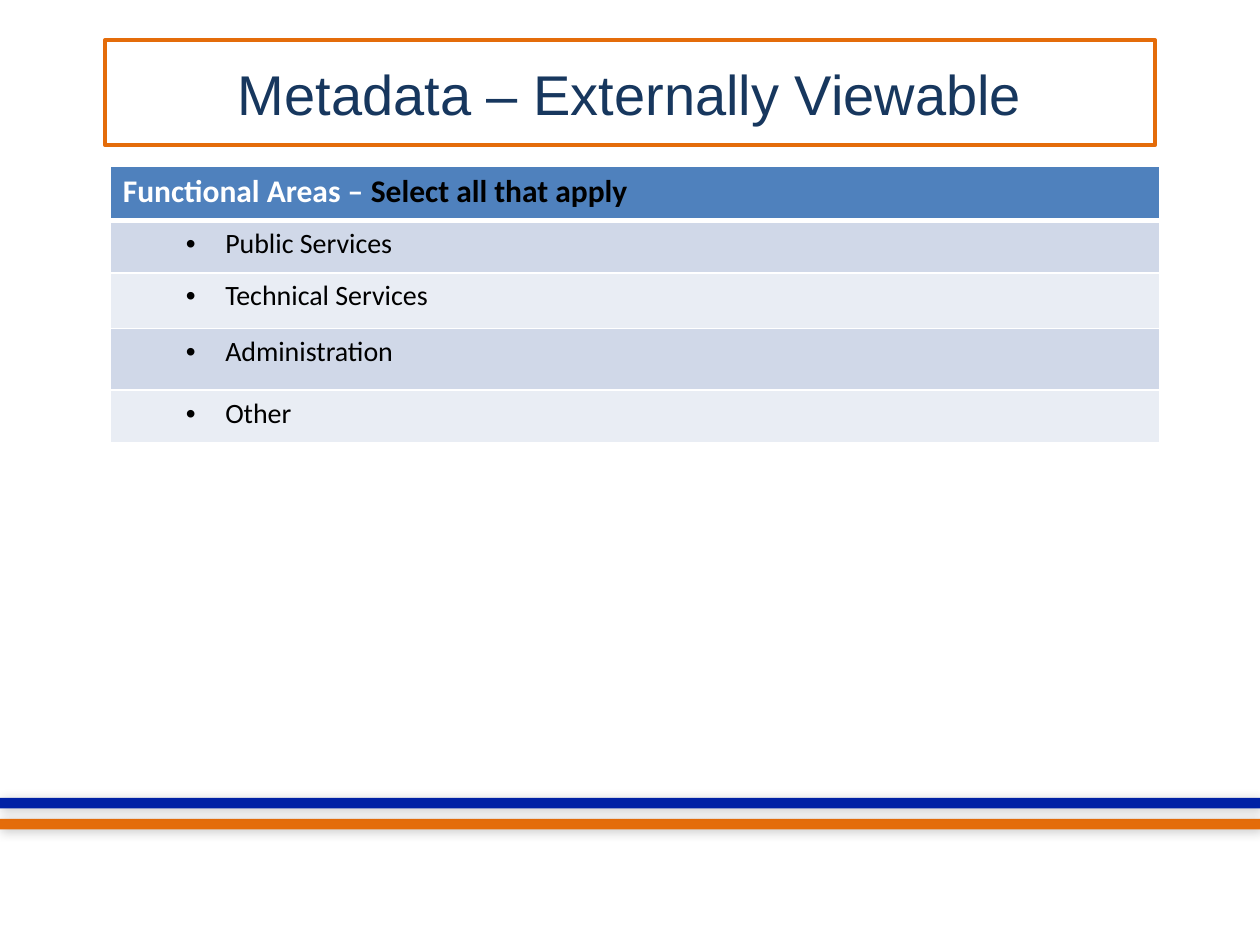
"""Build the slide on externally viewable metadata."""
import lxml.etree
import pptx
import pptx.dml.color
import pptx.enum.shapes
import pptx.enum.text
import pptx.oxml.ns
import pptx.util

COLORS = {
    "orange": "E46C0A",
    "blue": "0021A5",
    "navy": "17375E",
    "header": "4F81BD",
    "band_dark": "D0D8E8",
    "band_light": "E9EDF4",
    "white": "FFFFFF",
    "black": "000000",
}
AREAS = ["Public Services", "Technical Services", "Administration", "Other"]
ROW_HEIGHTS = [31, 30, 31.7, 35.3, 30]


def rgb(name):
    return pptx.dml.color.RGBColor.from_string(COLORS[name])


def add_node(parent, tag, **attributes):
    node = lxml.etree.SubElement(parent, pptx.oxml.ns.qn(tag))
    for key, value in attributes.items():
        node.set(key, str(value))
    return node


def add_text(paragraph, text, font="Calibri", size=16, color="black", bold=False):
    run = paragraph.add_run()
    run.text = text
    run.font.name = font
    run.font.size = pptx.util.Pt(size)
    run.font.color.rgb = rgb(color)
    run.font.bold = bold


class SlideBuilder:
    def __init__(self, slide):
        self.slide = slide

    def title(self, text, left, top, width, height):
        heading = self.slide.shapes.title
        heading.left, heading.top = pptx.util.Pt(left), pptx.util.Pt(top)
        heading.width, heading.height = pptx.util.Pt(width), pptx.util.Pt(height)
        heading.line.color.rgb = rgb("orange")
        heading.line.width = pptx.util.Pt(2.25)
        frame = heading.text_frame
        frame.word_wrap = True
        frame.auto_size = pptx.enum.text.MSO_AUTO_SIZE.SHAPE_TO_FIT_TEXT
        frame.paragraphs[0].alignment = pptx.enum.text.PP_ALIGN.CENTER
        add_text(frame.paragraphs[0], text, font="Arial", size=32, color="navy")

    def stripe(self, top, color):
        stripe = self.slide.shapes.add_shape(
            pptx.enum.shapes.MSO_SHAPE.RECTANGLE,
            0, pptx.util.Pt(top), pptx.util.Pt(720), pptx.util.Pt(6))
        stripe.fill.solid()
        stripe.fill.fore_color.rgb = rgb(color)
        stripe.line.fill.background()
        stripe.shadow.inherit = False
        effects = stripe.element.spPr.find(pptx.oxml.ns.qn("a:effectLst"))
        shadow = add_node(effects, "a:outerShdw", blurRad=pptx.util.Pt(6),
                          dist=pptx.util.Pt(1), dir=45 * 60000, rotWithShape=0)
        shade = add_node(shadow, "a:srgbClr", val=COLORS["black"])
        add_node(shade, "a:alpha", val=20000)

    def table(self, left, top, width, row_heights):
        table = self.slide.shapes.add_table(
            len(row_heights), 1, pptx.util.Pt(left), pptx.util.Pt(top),
            pptx.util.Pt(width), pptx.util.Pt(sum(row_heights))).table
        table.first_row = table.horz_banding = False
        for row, height in zip(table.rows, row_heights):
            row.height = pptx.util.Pt(height)
        return table

    def cell(self, cell, fill, top_border=1, bottom_border=1):
        properties = cell._tc.get_or_add_tcPr()
        borders = {"L": 1, "R": 1, "T": top_border, "B": bottom_border}
        for side, weight in borders.items():
            border = add_node(properties, f"a:ln{side}", w=pptx.util.Pt(weight))
            paint = add_node(border, "a:solidFill")
            add_node(paint, "a:srgbClr", val=COLORS["white"])
        cell.fill.solid()
        cell.fill.fore_color.rgb = rgb(fill)
        return cell.text_frame.paragraphs[0]

    def bullet(self, paragraph, text):
        paragraph.level = 1
        layout = paragraph._p.get_or_add_pPr()
        layout.set("marL", str(pptx.util.Pt(58.5)))
        layout.set("indent", str(pptx.util.Pt(-22.5)))
        add_node(layout, "a:buFont", typeface="Arial")
        add_node(layout, "a:buChar", char="•")
        add_text(paragraph, text)


def main():
    presentation = pptx.Presentation()
    presentation.slide_width = pptx.util.Pt(720)
    presentation.slide_height = pptx.util.Pt(540)
    builder = SlideBuilder(
        presentation.slides.add_slide(presentation.slide_layouts[5]))

    builder.stripe(468, "orange")
    builder.stripe(456, "blue")
    builder.title("Metadata – Externally Viewable", 60, 30, 600, 46)

    functional_areas = builder.table(63, 95, 600, ROW_HEIGHTS)
    header = builder.cell(functional_areas.cell(0, 0), "header", bottom_border=3)
    add_text(header, "Functional Areas – ", size=18, color="white", bold=True)
    add_text(header, "Select all that apply", size=18, bold=True)
    for row, area in enumerate(AREAS, start=1):
        band = "band_dark" if row % 2 else "band_light"
        entry = builder.cell(functional_areas.cell(row, 0), band,
                             top_border=3 if row == 1 else 1)
        builder.bullet(entry, area)

    presentation.save("out.pptx")


if __name__ == "__main__":
    main()
